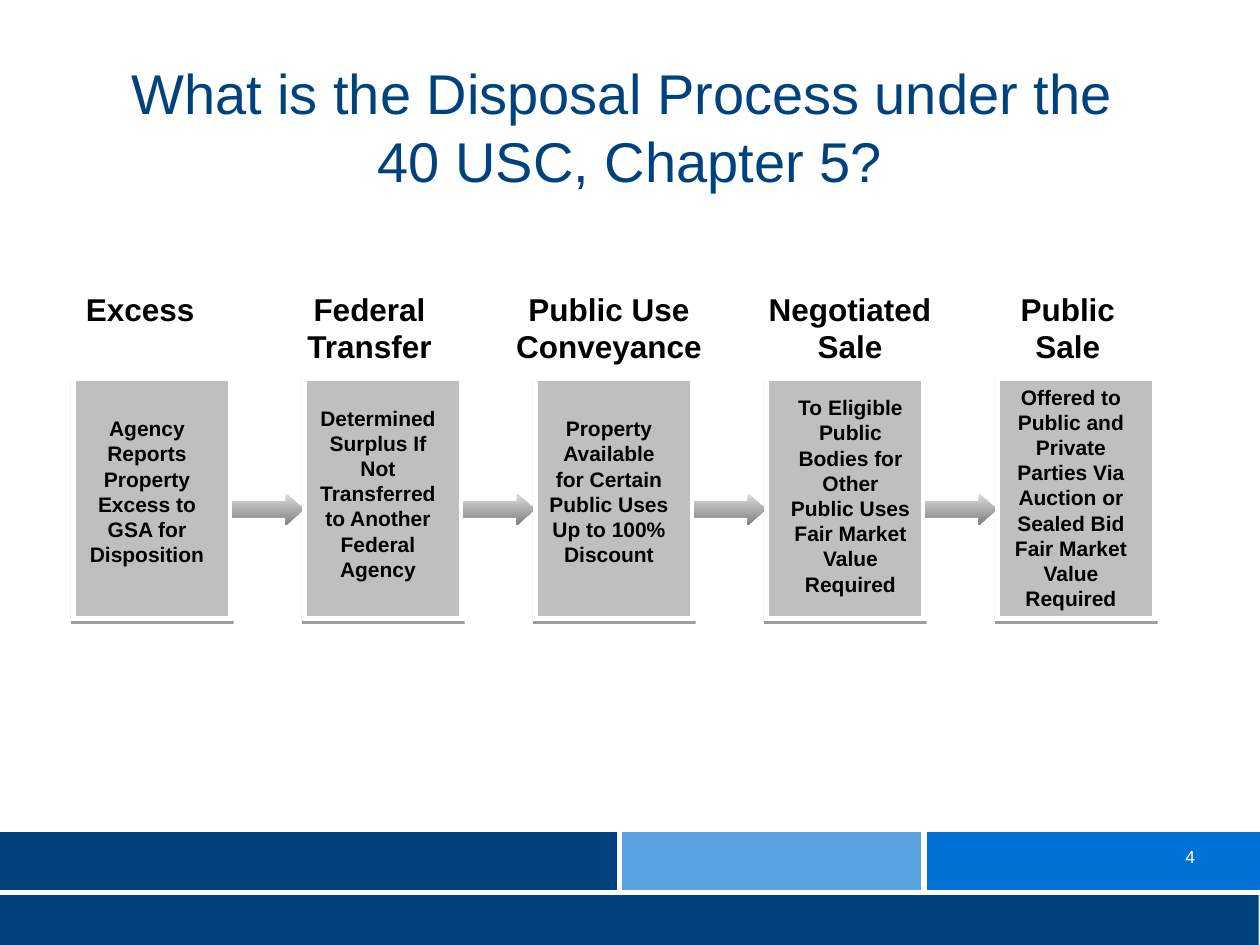
import pptx
import pptx.util
import pptx.dml.color
import pptx.enum.shapes
import pptx.enum.text
import pptx.oxml
import lxml.etree

RGB = pptx.dml.color.RGBColor.from_string
SHAPE = pptx.enum.shapes.MSO_SHAPE
ALIGN = pptx.enum.text.PP_ALIGN
ANCHOR = pptx.enum.text.MSO_ANCHOR
FIT = pptx.enum.text.MSO_AUTO_SIZE
Pt = pptx.util.Pt
qn = pptx.oxml.ns.qn

THEME = {
    "font": "Arial",
    "navy": RGB("00437C"), "sky": RGB("5AA3E3"), "blue": RGB("0072D5"),
    "white": RGB("FFFFFF"), "black": RGB("000000"), "box": RGB("BFBFBF"),
    "arrow": (RGB("DDDDDD"), RGB("7F7F7F")),
    "title": Pt(32), "heading": Pt(18), "body": Pt(12), "number": Pt(10),
    "rule": Pt(3),
}
SHADOW = (
    '<a:effectLst xmlns:a="http://schemas.openxmlformats.org/drawingml/2006/main">'
    '<a:outerShdw blurRad="0" dist="20320" dir="5400000" rotWithShape="0">'
    '<a:srgbClr val="000000"><a:alpha val="38000"/></a:srgbClr>'
    '</a:outerShdw></a:effectLst>'
)

prs = pptx.Presentation()
prs.slide_width = pptx.util.Inches(10)
prs.slide_height = pptx.util.Inches(7.5)
s = prs.slides.add_slide(prs.slide_layouts[5])
U = prs.slide_width // 120  # grid: 120 columns by 90 rows


def grid(*cells):
    return [round(c * U) for c in cells]


def write(shape, lines, size, color, bold=False, align=ALIGN.CENTER):
    tf = shape.text_frame
    for i, line in enumerate(lines):
        p = tf.paragraphs[0] if i == 0 else tf.add_paragraph()
        p.alignment = align
        r = p.add_run()
        r.text = line
        r.font.name = THEME["font"]
        r.font.size = THEME[size]
        r.font.bold = bold
        r.font.color.rgb = THEME[color]
    return tf


# Footer bands
for left, top, width, height, color in [
    (-0.12, 79, 120, 11, "navy"), (59, 79, 29, 6, "sky"), (88, 79, 32, 6, "blue"),
]:
    sp = s.shapes.add_shape(SHAPE.RECTANGLE, *grid(left, top, width, height))
    sp.shadow.inherit = False
    sp.fill.solid()
    sp.fill.fore_color.rgb = THEME[color]
    sp.line.fill.background()

# White rules between the bands
for ends in [(88, 85, 88, 35), (0, 79, 120, 79), (59, 85, 59, 46), (0, 85, 120, 85)]:
    rule = s.shapes.add_connector(pptx.enum.shapes.MSO_CONNECTOR.STRAIGHT, *grid(*ends))
    rule.line.color.rgb = THEME["white"]
    rule.line.width = THEME["rule"]
    lxml.etree.SubElement(rule._element.spPr, qn("a:effectLst"))

# Slide number
sp = s.shapes.add_textbox(*grid(87, 80, 28, 6.25))
write(sp, ["4"], "number", "white", align=ALIGN.RIGHT).word_wrap = True

# Title
title = s.shapes.title
title.left, title.top, title.width, title.height = grid(0, 5, 120, 15)
tf = write(title, ["What is the Disposal Process under the ", "40 USC, Chapter 5?"],
           "title", "navy")
tf.auto_size = FIT.NONE
tf.vertical_anchor = ANCHOR.MIDDLE
tf.margin_bottom = Pt(9.5)

# Steps: heading lines, left and width; body text, left, top and line count
steps = [
    (["Excess"], 6.8, 13.1,
     "Agency Reports Property Excess to GSA for Disposition", 7, 39, 6),
    (["Federal", "Transfer"], 27.9, 14.6,
     "Determined Surplus If Not Transferred to Another Federal Agency", 29, 38, 7),
    (["Public Use", "Conveyance"], 47.8, 20.4,
     "Property Available for Certain Public Uses Up to 100% Discount", 51, 39, 6),
    (["Negotiated", "Sale"], 71.9, 18.1,
     "To Eligible Public Bodies for Other Public Uses Fair Market Value Required",
     74, 37, 8),
    (["Public", "Sale"], 95.9, 11.6,
     "Offered to Public and Private Parties Via Auction or Sealed Bid "
     "Fair Market Value Required", 95, 36, 9),
]
FIRST, PITCH, BOX = 7, 22, 15
for i, (heading, head_left, head_width, body, left, top, count) in enumerate(steps):
    box_left = FIRST + i * PITCH

    # Grey box with square corners and a thin shadow below
    sp = s.shapes.add_shape(SHAPE.RECTANGLE, *grid(box_left, 36, BOX, 22.9))
    sp.fill.solid()
    sp.fill.fore_color.rgb = THEME["box"]
    sp.line.color.rgb = THEME["white"]
    sp.line.width = THEME["rule"]
    lxml.etree.SubElement(sp._element.spPr.find(qn("a:ln")), qn("a:miter"), lim="800000")
    sp._element.spPr.append(pptx.oxml.parse_xml(SHADOW))

    # Heading above the box
    sp = s.shapes.add_textbox(*grid(head_left, 27, head_width, 3.6 * len(heading) + 1.2))
    tf = write(sp, heading, "heading", "black", bold=True)
    tf.word_wrap = False
    tf.auto_size = FIT.SHAPE_TO_FIT_TEXT

    # Description inside the box
    sp = s.shapes.add_textbox(*grid(left, top, 14, 2.4 * count + 1.2))
    tf = write(sp, [body], "body", "black", bold=True)
    tf.word_wrap = True
    tf.auto_size = FIT.SHAPE_TO_FIT_TEXT

    # Arrow to the next step
    if i < len(steps) - 1:
        sp = s.shapes.add_shape(SHAPE.RIGHT_ARROW, *grid(box_left + BOX + 0.1, 47, 6.85, 3))
        sp.adjustments[1] = 0.57
        sp.shadow.inherit = False
        sp.line.fill.background()
        sp.fill.gradient()
        sp.fill.gradient_angle = 270
        for stop, color in zip(sp.fill.gradient_stops, THEME["arrow"]):
            stop.color.rgb = color

prs.save("out.pptx")
